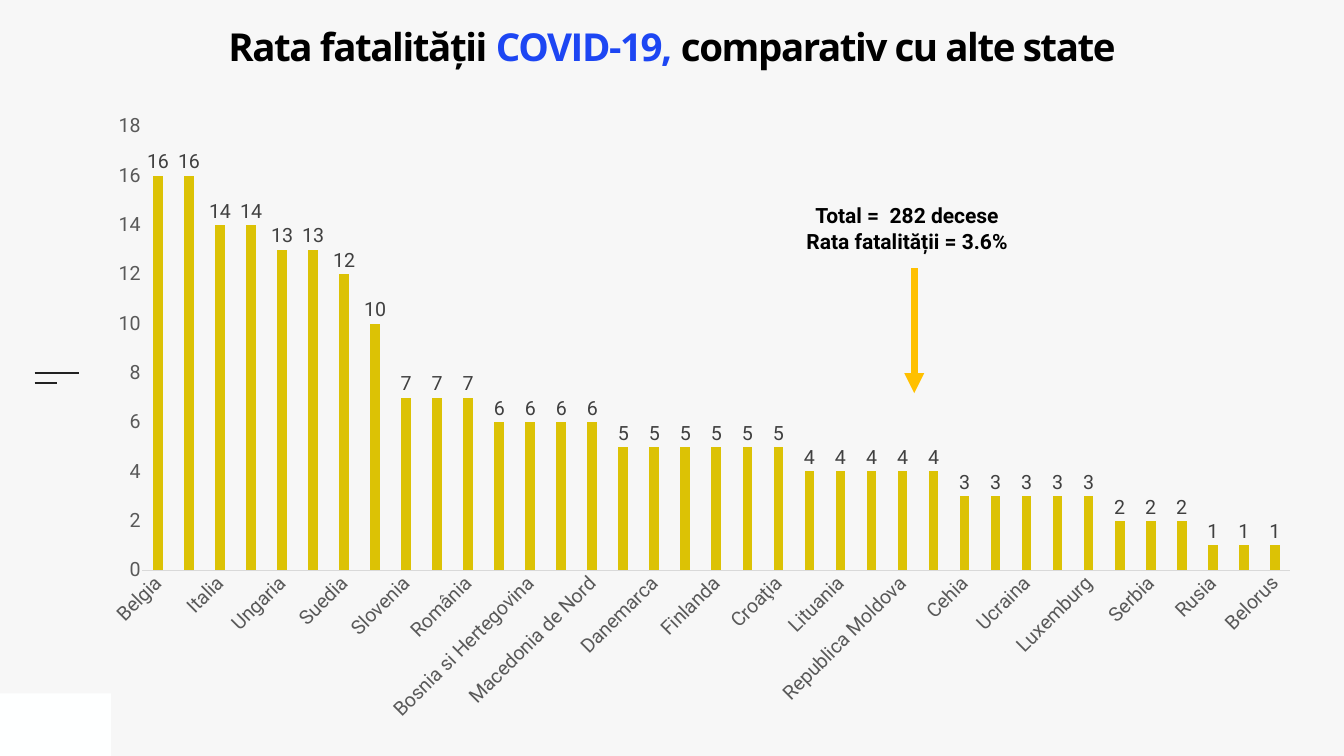
from lxml.etree import SubElement
from pptx import Presentation
from pptx.chart.data import CategoryChartData
from pptx.dml.color import RGBColor
from pptx.enum.chart import XL_CHART_TYPE as ChartType, XL_LABEL_POSITION as LabelPosition
from pptx.enum.chart import XL_TICK_MARK as TickMark
from pptx.enum.shapes import MSO_CONNECTOR as Connector, MSO_SHAPE as Shape
from pptx.enum.text import MSO_ANCHOR as Anchor, PP_ALIGN as Align
from pptx.oxml.ns import qn
from pptx.util import Cm, Pt

# Content
TITLE = [[("Rata fatalității ", "black"), ("COVID-19,", "blue"),
          (" comparativ cu alte state", "black")]]
CALLOUT = [[("Total =  282 decese", "black")],
           [("Rata fatalității = 3.6%", "black")]]
FATALITY_RATES = [16, 16, 14, 14, 13, 13, 12, 10, 7, 7, 7, 6, 6, 6, 6, 5, 5, 5, 5,
                  5, 5, 4, 4, 4, 4, 4, 3, 3, 3, 3, 3, 2, 2, 2, 1, 1, 1]
# Every second bar carries a country name
NAME_STEP = 2
COUNTRIES = ["Belgia", "Italia", "Ungaria", "Suedia", "Slovenia", "România",
             "Bosnia si Hertegovina", "Macedonia de Nord", "Danemarca", "Finlanda",
             "Croaţia", "Lituania", "Republica Moldova", "Cehia", "Ucraina",
             "Luxemburg", "Serbia", "Rusia", "Belorus"]
COLORS = {"background": "F7F7F7", "corner": "FEFFFF", "dash": "222222",
          "black": "000000", "blue": "1D46F3", "bar": "DCC205", "arrow": "FFC000",
          "axis": "D9D9D9", "tick": "595959", "label": "404040"}
# x1, y1, x2, y2 in cm
DASHES = [(1.75, 18.82, 3.99, 18.82), (1.75, 19.28, 2.87, 19.28)]
ARROW = (46.08, 13.51, 46.08, 19.81)


def color(name):
    return RGBColor.from_string(COLORS[name])


def style_font(font, tint, size=28, name="Roboto"):
    font.name, font.size, font.color.rgb = name, Pt(size), color(tint)


def add_text(slide, paragraphs, box, *, font, size, inset=0, anchor=Anchor.TOP, spacing=None):
    frame = slide.shapes.add_textbox(*map(Cm, box)).text_frame
    frame.word_wrap = True
    frame.vertical_anchor = anchor
    frame.margin_left = frame.margin_right = Cm(inset)
    frame.margin_top = frame.margin_bottom = Cm(inset)
    for number, runs in enumerate(paragraphs):
        paragraph = frame.add_paragraph() if number else frame.paragraphs[0]
        paragraph.alignment = Align.CENTER
        for text, tint in runs:
            run = paragraph.add_run()
            run.text = text
            style_font(run.font, tint, size, font)
            run.font.bold = True
            if spacing is not None:
                run.font._element.set("spc", str(spacing))


def add_line(slide, ends, tint, width, arrow=False):
    connector = slide.shapes.add_connector(Connector.STRAIGHT, *map(Cm, ends))
    connector.line.color.rgb = color(tint)
    connector.line.width = Pt(width)
    if arrow:
        SubElement(connector.line._get_or_add_ln(), qn("a:tailEnd"), type="triangle")
    SubElement(connector._element.spPr, qn("a:effectLst"))


def add_rates_chart(slide, box):
    data = CategoryChartData(number_format="0")
    bar_names = [""] * len(FATALITY_RATES)
    bar_names[::NAME_STEP] = COUNTRIES
    data.categories = bar_names
    data.add_series("", FATALITY_RATES)
    chart = slide.shapes.add_chart(ChartType.COLUMN_CLUSTERED, *map(Cm, box), data).chart
    chart.has_legend = chart.has_title = False
    style_font(chart.font, "black")

    # Bars and their labels
    plot = chart.plots[0]
    plot.gap_width, plot.overlap, plot.vary_by_categories = 219, -27, False
    bars = plot.series[0].format.fill
    bars.solid()
    bars.fore_color.rgb = color("bar")
    plot.has_data_labels = True
    labels = plot.data_labels
    labels.show_value = True
    labels.position = LabelPosition.OUTSIDE_END
    labels.number_format, labels.number_format_is_linked = "0", False
    style_font(labels.font, "label")

    # Axes
    for axis in (chart.category_axis, chart.value_axis):
        axis.has_major_gridlines = False
        axis.major_tick_mark = axis.minor_tick_mark = TickMark.NONE
        style_font(axis.tick_labels.font, "tick")
    rate_axis = chart.value_axis
    rate_axis.minimum_scale, rate_axis.maximum_scale, rate_axis.major_unit = 0, 18, 2
    rate_axis.tick_labels.number_format = "0"
    rate_axis.tick_labels.number_format_is_linked = False
    rate_axis.format.line.fill.background()
    country_axis = chart.category_axis
    country_axis.format.line.color.rgb = color("axis")
    country_axis.format.line.width = Pt(0.75)

    # Slanted country names
    axis_xml = country_axis._element
    axis_xml.find(qn("c:txPr")).find(qn("a:bodyPr")).set("rot", "-2700000")
    skip = SubElement(axis_xml, qn("c:tickLblSkip"), val=str(NAME_STEP))
    axis_xml.find(qn("c:noMultiLvlLbl")).addprevious(skip)


def main():
    deck = Presentation()
    deck.slide_width, deck.slide_height = Cm(67.74), Cm(38.1)
    slide = deck.slides.add_slide(deck.slide_layouts[6])
    slide.background.fill.solid()
    slide.background.fill.fore_color.rgb = color("background")

    # Corner block and margin dashes
    corner = slide.shapes.add_shape(Shape.RECTANGLE, *map(Cm, (0, 34.95, 5.59, 3.15)))
    corner.shadow.inherit = False
    corner.fill.solid()
    corner.fill.fore_color.rgb = color("corner")
    corner.line.fill.background()
    for dash in DASHES:
        add_line(slide, dash, "dash", 3)

    # Chart, title and callout
    add_rates_chart(slide, (4.42, 5.16, 61.85, 31.83))
    add_text(slide, TITLE, (0, 1.14, 67.74, 4.01), font="Open Sans", size=55, spacing=-200)
    add_line(slide, ARROW, "arrow", 9.5, arrow=True)
    add_text(slide, CALLOUT, (33.86, 10.08, 23.72, 2.84), font="Roboto", size=30,
             inset=0.15, anchor=Anchor.MIDDLE)
    deck.save("out.pptx")


if __name__ == "__main__":
    main()
